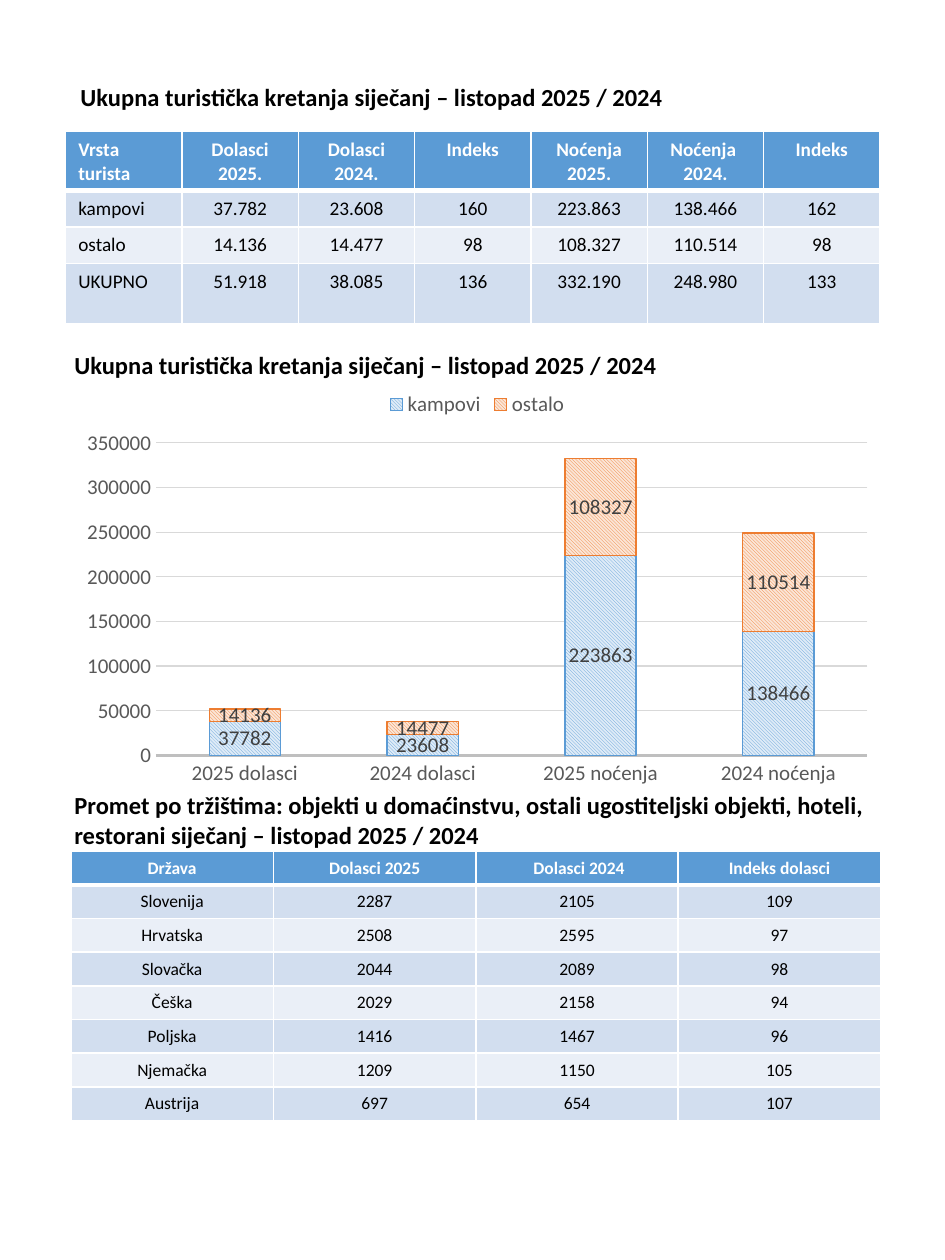
from dataclasses import dataclass

from lxml import etree
from pptx import Presentation
from pptx.chart.data import CategoryChartData
from pptx.dml.color import RGBColor
from pptx.enum.chart import XL_CHART_TYPE, XL_LABEL_POSITION, XL_LEGEND_POSITION, XL_TICK_MARK
from pptx.enum.dml import MSO_PATTERN
from pptx.enum.text import MSO_ANCHOR, PP_ALIGN
from pptx.oxml.ns import qn
from pptx.util import Inches, Pt

STACKED = XL_CHART_TYPE.COLUMN_STACKED
LABEL_CENTER = XL_LABEL_POSITION.CENTER
LEGEND_TOP = XL_LEGEND_POSITION.TOP
NO_TICK = XL_TICK_MARK.NONE
HATCH = MSO_PATTERN.LIGHT_DOWNWARD_DIAGONAL
TOP, MIDDLE = MSO_ANCHOR.TOP, MSO_ANCHOR.MIDDLE
LEFT, CENTER = PP_ALIGN.LEFT, PP_ALIGN.CENTER


@dataclass(frozen=True)
class Theme:
    """Fonts, colours, type sizes and line widths of the report."""
    font: str = "Calibri"
    text: str = "000000"
    light: str = "FFFFFF"
    header: str = "5B9BD5"
    bands: tuple = ("D2DEEF", "EAEFF7")
    series: tuple = (("5B9BD5", "DEEBF7"), ("ED7D31", "FBE5D6"))
    axis_text: str = "595959"
    label_text: str = "404040"
    axis_line: str = "BFBFBF"
    grid_line: str = "D9D9D9"
    heading_size: int = 14
    chart_size: int = 12
    border: float = 1
    header_border: float = 3
    thin: float = 0.75
    axis_width: float = 1.5


def set_values(target, values):
    """Set attributes of a target from a dict."""
    for name, value in values.items():
        setattr(target, name, value)


class ReportPage:
    """Draws on one slide, with places given in percent of its size."""

    def __init__(self, presentation, theme):
        """Add a blank slide to the presentation."""
        self.theme = theme
        self.column = presentation.slide_width / 100
        self.row = presentation.slide_height / 100
        self.slide = presentation.slides.add_slide(presentation.slide_layouts[6])

    def place(self, left, top, width, height):
        """Turn percentages into slide lengths."""
        return (round(left * self.column), round(top * self.row),
                round(width * self.column), round(height * self.row))

    def style_font(self, font, size, color, bold=False):
        """Apply the theme font with a size, colour and weight."""
        set_values(font, {"name": self.theme.font, "size": Pt(size), "bold": bold})
        font.color.rgb = RGBColor.from_string(color)

    def style_line(self, line, color, width):
        """Give a line a solid colour and a width."""
        line.color.rgb = RGBColor.from_string(color)
        line.width = Pt(width)

    def headings(self, box, texts, anchor=TOP, spacing=1.0, gap=0):
        """Add a box of bold headings set apart by a gap in points."""
        frame = self.slide.shapes.add_textbox(*self.place(*box)).text_frame
        set_values(frame, {"word_wrap": True, "vertical_anchor": anchor, "text": "\n".join(texts)})
        for index, paragraph in enumerate(frame.paragraphs):
            set_values(paragraph, {"line_spacing": spacing, "space_before": Pt(gap if index else 0)})
            self.style_font(paragraph.runs[0].font, self.theme.heading_size, self.theme.text, True)

    def borders(self, cell, top, bottom):
        """Draw the four white borders of a cell."""
        properties = cell._tc.get_or_add_tcPr()
        widths = {"a:lnL": self.theme.border, "a:lnR": self.theme.border, "a:lnT": top, "a:lnB": bottom}
        for index, (tag, width) in enumerate(widths.items()):
            line = etree.Element(qn(tag), w=str(Pt(width)))
            fill = etree.SubElement(line, qn("a:solidFill"))
            etree.SubElement(fill, qn("a:srgbClr"), val=self.theme.light)
            properties.insert(index, line)

    def table(self, box, records, heights, size, first_align=CENTER):
        """Add a banded table with equal columns and a bold header."""
        theme = self.theme
        columns = len(records[0])
        table = self.slide.shapes.add_table(len(records), columns, *self.place(*box)).table
        for column in table.columns:
            column.width = round(box[2] * self.column / columns)
        for r, (record, height) in enumerate(zip(records, heights)):
            table.rows[r].height = round(height * self.row)
            fill = theme.bands[(r - 1) % 2] if r else theme.header
            top = theme.header_border if r == 1 else theme.border
            bottom = theme.border if r else theme.header_border
            for c, text in enumerate(record):
                cell = table.cell(r, c)
                cell.text = text
                cell.fill.solid()
                cell.fill.fore_color.rgb = RGBColor.from_string(fill)
                self.borders(cell, top, bottom)
                for paragraph in cell.text_frame.paragraphs:
                    paragraph.alignment = CENTER if c else first_align
                    self.style_font(paragraph.runs[0].font, size,
                                    theme.text if r else theme.light, not r)

    def stacked_chart(self, box, categories, series):
        """Add a stacked column chart with hatched series."""
        theme = self.theme
        data = CategoryChartData()
        data.categories = categories
        for name, values in series.items():
            data.add_series(name, values)
        chart = self.slide.shapes.add_chart(STACKED, *self.place(*box), data).chart
        set_values(chart, {"has_title": False, "has_legend": True})
        self.style_font(chart.font, theme.chart_size, theme.axis_text)
        set_values(chart.legend, {"position": LEGEND_TOP, "include_in_layout": False})
        self.style_font(chart.legend.font, theme.chart_size, theme.axis_text)
        for axis in (chart.category_axis, chart.value_axis):
            set_values(axis, {"major_tick_mark": NO_TICK, "minor_tick_mark": NO_TICK})
            self.style_font(axis.tick_labels.font, theme.chart_size, theme.axis_text)
        self.style_line(chart.category_axis.format.line, theme.axis_line, theme.axis_width)
        set_values(chart.value_axis, {"minimum_scale": 0, "maximum_scale": 350000, "major_unit": 50000})
        chart.value_axis.format.line.fill.background()
        self.style_line(chart.value_axis.major_gridlines.format.line, theme.grid_line, theme.thin)
        plot = chart.plots[0]
        set_values(plot, {"gap_width": 150, "overlap": 100, "vary_by_categories": False})
        for bars, (strong, pale) in zip(plot.series, theme.series):
            fill = bars.format.fill
            fill.patterned()
            fill.pattern = HATCH
            fill.fore_color.rgb = RGBColor.from_string(strong)
            fill.back_color.rgb = RGBColor.from_string(pale)
            self.style_line(bars.format.line, strong, theme.thin)
            set_values(bars.data_labels, {"show_value": True, "position": LABEL_CENTER})
            self.style_font(bars.data_labels.font, theme.chart_size, theme.label_text)


TITLE = "Ukupna turistička kretanja siječanj – listopad 2025 / 2024"
MARKETS = ("Promet po tržištima: objekti u domaćinstvu, ostali ugostiteljski objekti, "
           "hoteli, restorani siječanj – listopad 2025 / 2024")
TOTALS = [
    ("Vrsta turista", "Dolasci\n2025.", "Dolasci\n2024.", "Indeks",
     "Noćenja\n2025.", "Noćenja \n2024.", "Indeks"),
    ("kampovi", "37.782", "23.608", "160", "223.863", "138.466", "162"),
    ("ostalo", "14.136", "14.477", "98", "108.327", "110.514", "98"),
    ("UKUPNO", "51.918", "38.085", "136", "332.190", "248.980", "133"),
]
COUNTRIES = [
    ("Država", "Dolasci 2025", " Dolasci 2024", "Indeks dolasci"),
    ("Slovenija", "2287", "2105", "109"),
    ("Hrvatska", "2508", "2595", "97"),
    ("Slovačka", "2044", "2089", "98"),
    ("Češka", "2029", "2158", "94"),
    ("Poljska", "1416", "1467", "96"),
    ("Njemačka", "1209", "1150", "105"),
    ("Austrija", "697", "654", "107"),
]
CATEGORIES = ("2025 dolasci", "2024 dolasci", "2025 noćenja", "2024 noćenja")
SERIES = {
    "kampovi": (37782, 23608, 223863, 138466),
    "ostalo": (14136, 14477, 108327, 110514),
}


def main():
    """Build and save the tourism report."""
    presentation = Presentation()
    set_values(presentation, {"slide_width": Inches(7.5), "slide_height": Inches(10)})
    page = ReportPage(presentation, Theme())
    page.headings((7.2, 5.3, 86.3, 5.1), [TITLE], MIDDLE, 0.9)
    page.table((6.95, 10.45, 86.2, 15.2), TOTALS, (4.6, 2.9, 2.9, 4.8), 11, LEFT)
    page.headings((6.55, 27.25, 86.6, 67.7), [TITLE, MARKETS], gap=235)
    page.stacked_chart((7.5, 30, 86, 33), CATEGORIES, SERIES)
    page.table((7.5, 67.55, 85.7, 21.3), COUNTRIES, [21.3 / len(COUNTRIES)] * len(COUNTRIES), 10)
    presentation.save("out.pptx")


if __name__ == "__main__":
    main()
